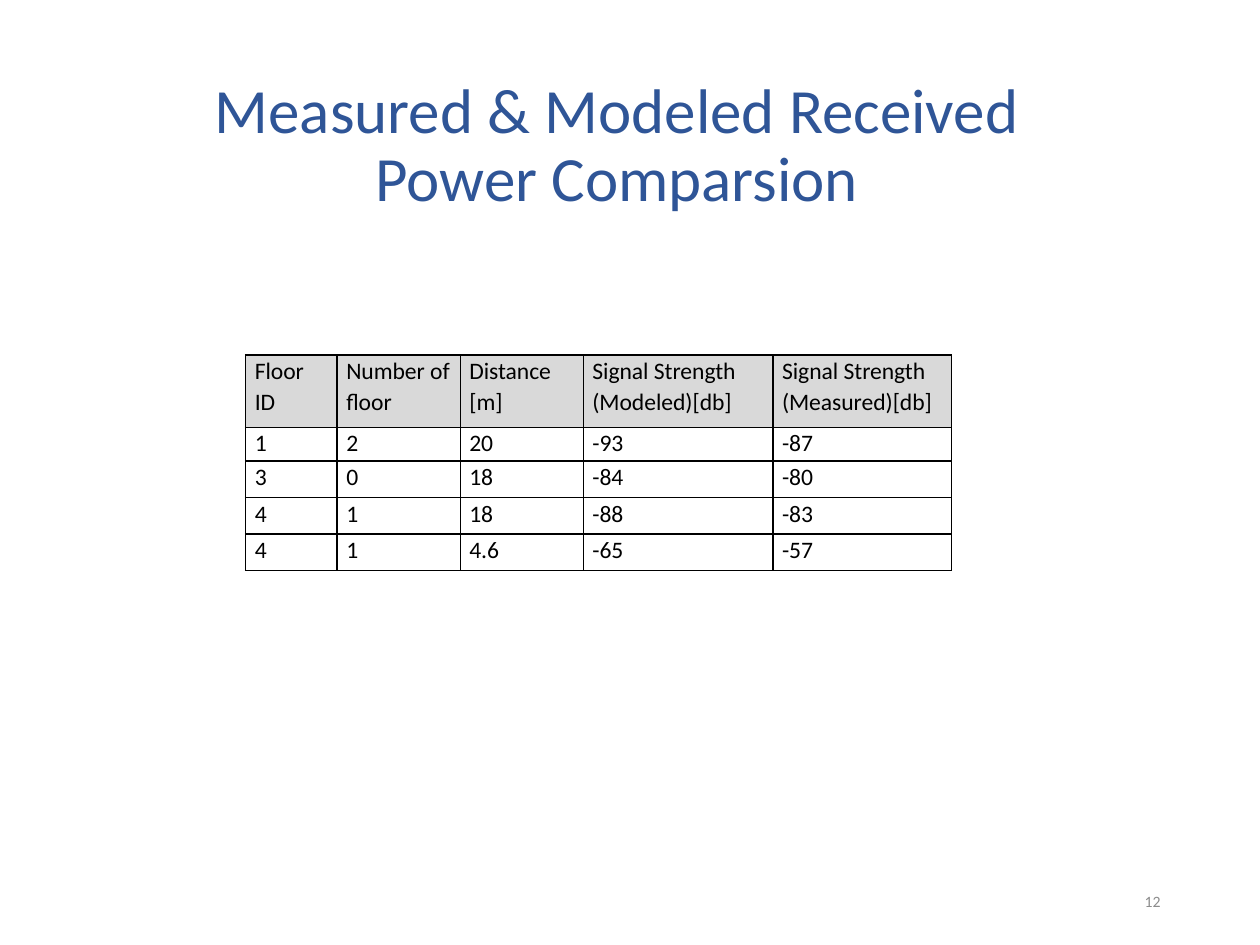
from lxml.etree import SubElement
from pptx import Presentation
from pptx.dml.color import RGBColor
from pptx.enum.text import MSO_ANCHOR, PP_ALIGN
from pptx.oxml.ns import qn
from pptx.util import Pt

TITLE = "Measured & Modeled Received Power Comparsion"
PAGE = "12"
ROWS = [
    ("Floor ID", "Number of floor", "Distance\n[m]",
     "Signal Strength (Modeled)[db]", "Signal Strength (Measured)[db]"),
    ("1", "2", "20", "-93", "-87"),
    ("3", "0", "18", "-84", "-80"),
    ("4", "1", "18", "-88", "-83"),
    ("4", "1", "4.6", "-65", "-57"),
]
WIDTHS = [52.3, 70.3, 70.3, 108.4, 102]
HEIGHTS = [41.2, 19.4, 20.8, 20.8, 20.8]
HUES = {"title": "2F5597", "page": "8C8C8C", "ink": "000000", "head": "D9D9D9"}
FONT = "Calibri"


def write(para, text, size, hue, align=PP_ALIGN.LEFT, space=1.0):
    para.text = text
    para.alignment = align
    para.line_spacing = space
    para.font.name = FONT
    para.font.size = Pt(size)
    para.font.color.rgb = RGBColor.from_string(HUES[hue])


def add_text(slide, box, anchor, *style):
    frame = slide.shapes.add_textbox(*map(Pt, box)).text_frame
    frame.word_wrap = True
    frame.vertical_anchor = anchor
    write(frame.paragraphs[0], *style)


def add_edges(cell):
    props = cell._tc.get_or_add_tcPr()
    for side in ("a:lnL", "a:lnR", "a:lnT", "a:lnB"):
        line = SubElement(props, qn(side), w=str(Pt(1)))
        fill = SubElement(line, qn("a:solidFill"))
        SubElement(fill, qn("a:srgbClr"), val=HUES["ink"])


def fill_cell(cell, text, head):
    cell.margin_left = cell.margin_right = Pt(5.2)
    cell.margin_top = cell.margin_bottom = 0
    add_edges(cell)
    if head:
        cell.fill.solid()
        cell.fill.fore_color.rgb = RGBColor.from_string(HUES["head"])
    else:
        cell.fill.background()
    write(cell.text_frame.paragraphs[0], text, 13.5, "ink", PP_ALIGN.LEFT, 1.07)


deck = Presentation()
deck.slide_width, deck.slide_height = Pt(720), Pt(540)
slide = deck.slides.add_slide(deck.slide_layouts[6])

# Title and page number
add_text(slide, (75.6, 36.7, 553.7, 90), MSO_ANCHOR.BOTTOM,
         TITLE, 36, "title", PP_ALIGN.CENTER, 0.9)
add_text(slide, (508.3, 500.4, 162, 28.8), MSO_ANCHOR.MIDDLE,
         PAGE, 9, "page", PP_ALIGN.RIGHT)

# Signal table
table = slide.shapes.add_table(
    len(ROWS), len(WIDTHS), Pt(140.4), Pt(203),
    Pt(sum(WIDTHS)), Pt(sum(HEIGHTS))).table
table.first_row = table.horz_banding = False
for col, width in zip(table.columns, WIDTHS):
    col.width = Pt(width)
for r, (row, height) in enumerate(zip(ROWS, HEIGHTS)):
    table.rows[r].height = Pt(height)
    for c, text in enumerate(row):
        fill_cell(table.cell(r, c), text, r == 0)

deck.save("out.pptx")
